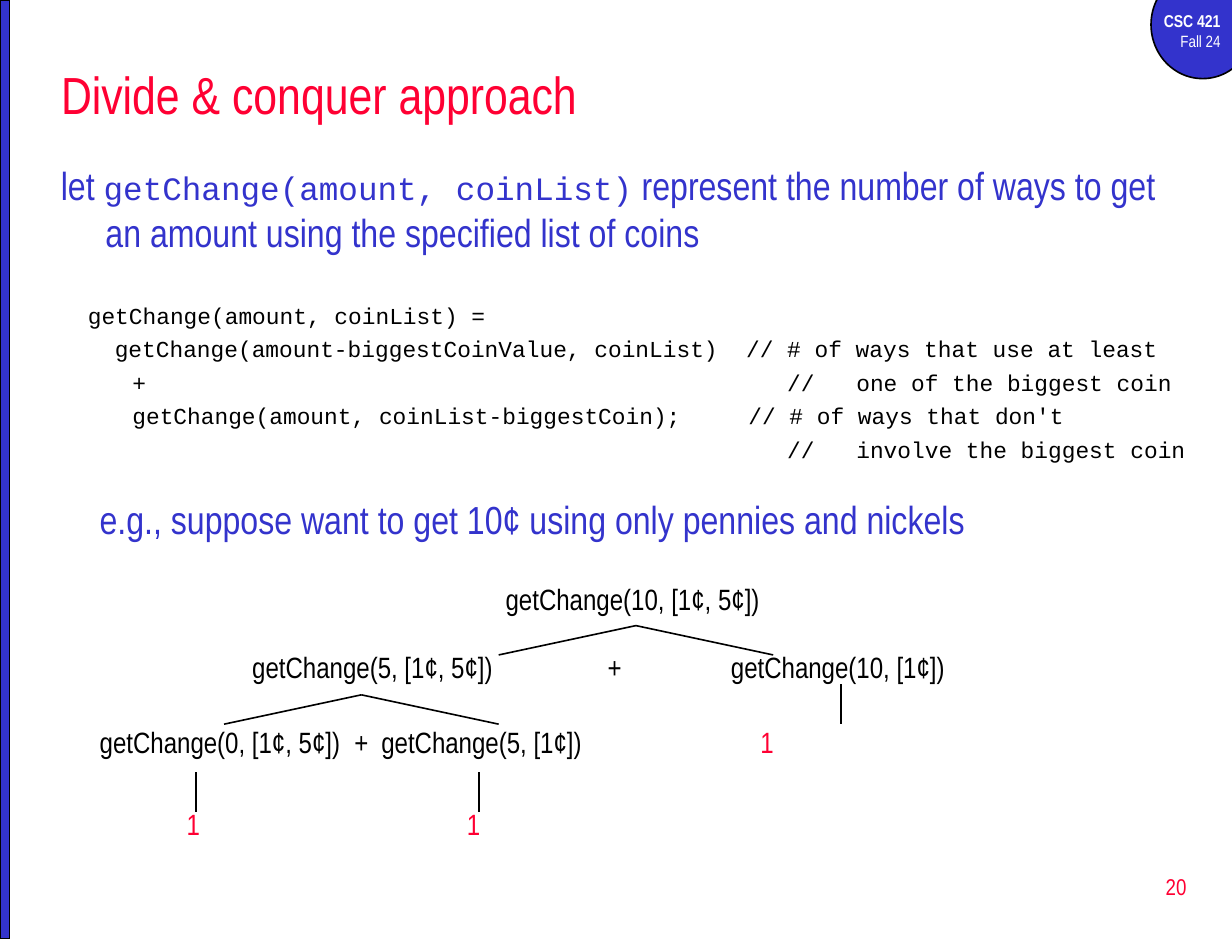
from lxml import etree
from pptx import Presentation
from pptx import util as u
from pptx.dml.color import RGBColor
from pptx.enum import shapes, text
from pptx.oxml.ns import qn

Inches, Pt = u.Inches, u.Pt
NARROW, MONO = "Arial Narrow", "Courier New"
BLUE, RED, BLACK, WHITE = "3333CC", "FF0033", "000000", "FFFFFF"
color = RGBColor.from_string


def add_run(paragraph, words, size, hue, font=NARROW, bold=False):
    run = paragraph.add_run()
    run.text = words
    run.font.size, run.font.name, run.font.bold = Pt(size), font, bold
    run.font.color.rgb = color(hue)


def add_box(left, top, width, height, inset=0.1, wrap=True,
            anchor=text.MSO_ANCHOR.TOP):
    frame = slide.shapes.add_textbox(
        Inches(left), Inches(top), Inches(width), Inches(height)).text_frame
    frame.word_wrap, frame.vertical_anchor = wrap, anchor
    frame.margin_left = frame.margin_right = Inches(inset)
    frame.margin_top = frame.margin_bottom = Inches(inset / 2)
    return frame


prs = Presentation()
prs.slide_width, prs.slide_height = Inches(10.5), Inches(8)
slide = prs.slides.add_slide(prs.slide_layouts[5])

for preset, left, top, width, height in [
    (shapes.MSO_SHAPE.OVAL, 9.81, -0.25, 0.88, 0.92),
    (shapes.MSO_SHAPE.RECTANGLE, 0, 0, 0.08, 8),
]:
    decoration = slide.shapes.add_shape(
        preset, Inches(left), Inches(top), Inches(width), Inches(height))
    decoration.shadow.inherit = False
    decoration.fill.solid()
    decoration.fill.fore_color.rgb = color(BLUE)
    decoration.line.color.rgb = color(BLACK)
    decoration.line.width = Pt(1)

course = add_box(9.67, 0.04, 0.83, 0.46)
term = course.add_paragraph()
add_run(course.paragraphs[0], "CSC 421", 10.5, WHITE, bold=True)
add_run(term, "Fall 24", 10, WHITE)
page = add_box(8.02, 7.29, 2.19, 0.53, anchor=text.MSO_ANCHOR.MIDDLE)
add_run(page.paragraphs[0], "20", 14, RED)
for line in (course.paragraphs[0], term, page.paragraphs[0]):
    line.alignment = text.PP_ALIGN.RIGHT

title = slide.shapes.title
title.left, title.top = Inches(0.42), Inches(0.42)
title.width, title.height = Inches(9.83), Inches(0.75)
title.text_frame.vertical_anchor = text.MSO_ANCHOR.MIDDLE
heading = title.text_frame.paragraphs[0]
heading.alignment = text.PP_ALIGN.LEFT
add_run(heading, "Divide & conquer approach", 32, RED)

body = add_box(0.42, 1.33, 9.85, 2.67)
statement = body.paragraphs[0]
indent = statement._p.get_or_add_pPr()
indent.set("marL", str(Inches(0.38)))
indent.set("indent", str(-Inches(0.38)))
add_run(statement, "let ", 24, BLUE)
add_run(statement, "getChange(amount, coinList)", 20, BLUE, MONO)
add_run(statement, " represent the number of ways to get an amount using "
        "the specified list of coins", 24, BLUE)

code_lines = [
    ("\tgetChange(amount, coinList) =", [0.23], 28),
    ("\tgetChange(amount-biggestCoinValue, coinList)"
     "\t// # of ways that use at least", [0.46, 5.84], 3.8),
    ("\t+\t//\tone of the biggest coin", [0.61, 6.19, 6.78], 3.8),
    ("\tgetChange(amount, coinList-biggestCoin);"
     "\t// # of ways that don't", [0.61, 5.86], 3.8),
    ("\t//\tinvolve the biggest coin", [6.19, 6.78], 3.8),
]
for words, stops, gap in code_lines:
    code = body.add_paragraph()
    code.space_before = Pt(gap)
    tabs = etree.SubElement(code._p.get_or_add_pPr(), qn("a:tabLst"))
    for stop in stops:
        etree.SubElement(tabs, qn("a:tab"), pos=str(Inches(stop)), algn="l")
    add_run(code, words, 14, BLACK, MONO)

example = add_box(0.75, 4.17, 9.52, 0.58)
add_run(example.paragraphs[0],
        "e.g., suppose want to get 10¢ using only pennies and nickels", 24, BLUE)

call_tree = [
    (5.10, [(4.31, "getChange(10, [1¢, 5¢])")]),
    (5.68, [(2.15, "getChange(5, [1¢, 5¢])"), (5.18, "+"),
            (6.23, "getChange(10, [1¢])")]),
    (6.32, [(0.85, "getChange(0, [1¢, 5¢])"), (3.02, "+"),
            (3.25, "getChange(5, [1¢])"), (6.48, "1")]),
    (7.02, [(1.59, "1"), (3.98, "1")]),
]
for middle, calls in call_tree:
    for left, words in calls:
        width = 2.4 if len(words) > 1 else 0.2
        call = add_box(left, middle - 0.15, width, 0.3, 0, False,
                       text.MSO_ANCHOR.MIDDLE)
        add_run(call.paragraphs[0], words, 18, RED if words == "1" else BLACK)

branches = [(x + side * 1.17, y + 0.25, x, y)
            for x, y in [(5.42, 5.33), (3.08, 5.92)] for side in (-1, 1)]
branches += [(x, y, x, y + 0.34)
             for x, y in [(1.67, 6.58), (4.08, 6.58), (7.17, 5.83)]]
for x1, y1, x2, y2 in branches:
    branch = slide.shapes.add_connector(
        shapes.MSO_CONNECTOR.STRAIGHT,
        Inches(x1), Inches(y1), Inches(x2), Inches(y2))
    branch.line.color.rgb = color(BLACK)
    branch.line.width = Pt(1)
    etree.SubElement(branch._element.spPr, qn("a:effectLst"))

prs.save("out.pptx")
